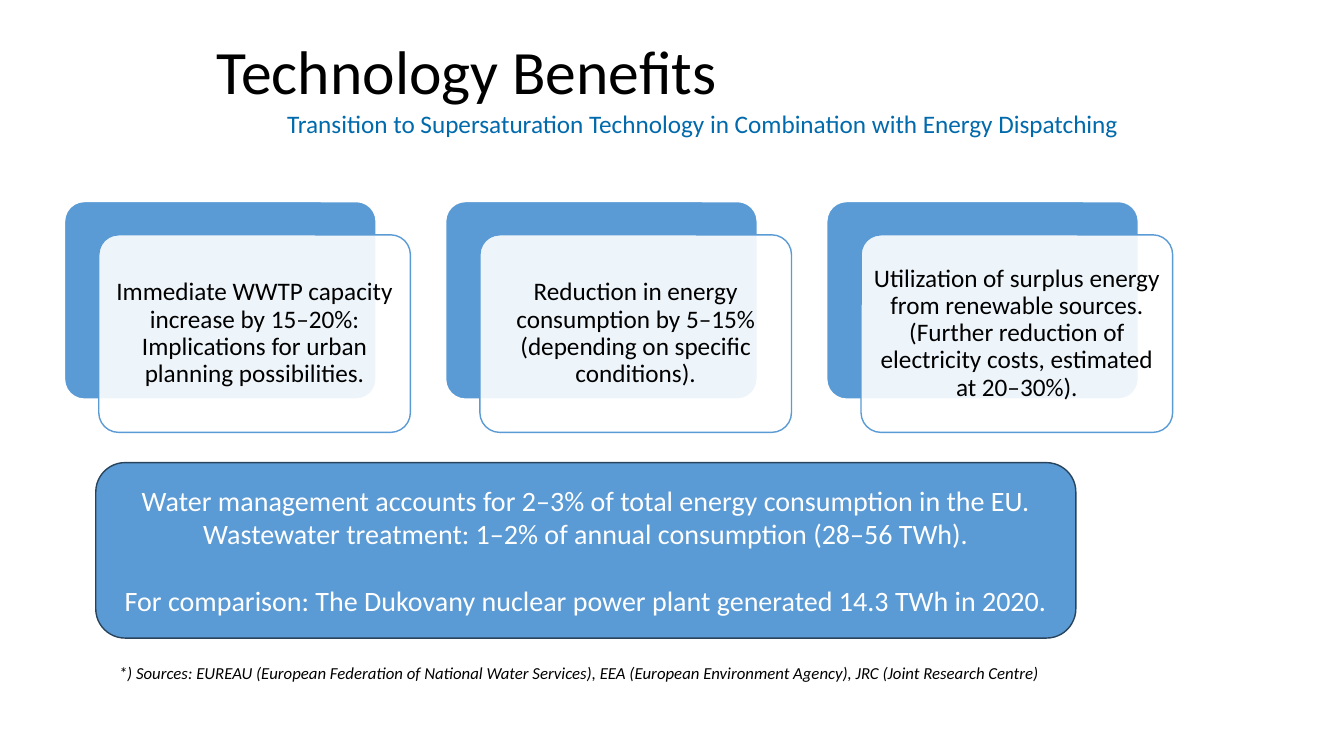
from dataclasses import dataclass
from typing import Any, Optional

import pptx
import pptx.dml.color
import pptx.enum.shapes
import pptx.enum.text
import pptx.oxml.ns
import pptx.util
from lxml import etree

Inches = pptx.util.Inches
Align = pptx.enum.text.PP_ALIGN
Anchor = pptx.enum.text.MSO_ANCHOR


@dataclass(frozen=True)
class Theme:
    font: str = "Calibri"
    black: str = "000000"
    white: str = "FFFFFF"
    blue: str = "5B9BD5"
    subtitle_blue: str = "006AAC"
    dark_outline: str = "28445D"
    title_size: int = 44
    body_size: int = 18
    callout_size: int = 20
    source_size: int = 12


@dataclass(frozen=True)
class Box:
    left: float
    top: float
    width: float
    height: float

    def moved(self, right: float, down: float) -> "Box":
        return Box(self.left + right, self.top + down, self.width, self.height)

    def lengths(self) -> tuple:
        return tuple(Inches(n) for n in (self.left, self.top, self.width, self.height))


THEME = Theme()
BENEFITS = (
    "Immediate WWTP capacity increase by 15–20%: Implications for urban planning possibilities.",
    "Reduction in energy consumption by 5–15% (depending on specific conditions).",
    "Utilization of surplus energy from renewable sources. "
    "(Further reduction of electricity costs, estimated at 20–30%).",
)
FIRST_CARD = Box(0.64, 2, 3.09, 1.96)
CARD_STEP = 3.78
FRONT_OFFSET = (0.34, 0.33)
CARD_INSET = 0.07


def rgb(color: str) -> pptx.dml.color.RGBColor:
    return pptx.dml.color.RGBColor.from_string(color)


def write_text(shape: Any, text: str, size: int, color: str, align: Align = Align.LEFT,
               anchor: Anchor = Anchor.TOP, spacing: Optional[float] = None,
               italic: bool = False) -> None:
    frame = shape.text_frame
    frame.text = text
    frame.word_wrap = True
    frame.vertical_anchor = anchor
    for paragraph in frame.paragraphs:
        paragraph.alignment = align
        if spacing:
            paragraph.line_spacing = spacing
        for run in paragraph.runs:
            run.font.name = THEME.font
            run.font.size = pptx.util.Pt(size)
            run.font.italic = italic
            run.font.color.rgb = rgb(color)


def add_text_box(slide: Any, box: Box, text: str, size: int, color: str,
                 italic: bool = False) -> None:
    shape = slide.shapes.add_textbox(*box.lengths())
    write_text(shape, text, size, color, italic=italic)


def add_rounded_box(slide: Any, box: Box, fill: str, outline: str,
                    corner: Optional[float] = None, opacity: int = 100) -> Any:
    shape = slide.shapes.add_shape(
        pptx.enum.shapes.MSO_SHAPE.ROUNDED_RECTANGLE, *box.lengths())
    shape.shadow.inherit = False
    if corner is not None:
        shape.adjustments[0] = corner
    shape.fill.solid()
    shape.fill.fore_color.rgb = rgb(fill)
    shape.line.color.rgb = rgb(outline)
    shape.line.width = pptx.util.Pt(1)
    if opacity < 100:
        qualified = pptx.oxml.ns.qn
        color = shape.fill._xPr.find(qualified("a:solidFill")).find(qualified("a:srgbClr"))
        etree.SubElement(color, qualified("a:alpha")).set("val", str(opacity * 1000))
    return shape


def add_benefit_card(slide: Any, box: Box, text: str) -> None:
    add_rounded_box(slide, box, THEME.blue, THEME.white, 0.1)
    front = add_rounded_box(slide, box.moved(*FRONT_OFFSET), THEME.white, THEME.blue, 0.1, 90)
    write_text(front, text, THEME.body_size, THEME.black, Align.CENTER, Anchor.MIDDLE, 0.9)
    frame = front.text_frame
    frame.margin_left = frame.margin_right = Inches(CARD_INSET)
    frame.margin_top = frame.margin_bottom = Inches(CARD_INSET)


def main() -> None:
    presentation = pptx.Presentation()
    presentation.slide_width = Inches(13.33)
    presentation.slide_height = Inches(7.5)
    slide = presentation.slides.add_slide(presentation.slide_layouts.get_by_name("Title Only"))

    # Title and subtitle
    title = slide.shapes.title
    title.left, title.top, title.width, title.height = Box(2.05, 0.24, 11.15, 0.99).lengths()
    write_text(title, "Technology Benefits", THEME.title_size, THEME.black,
               anchor=Anchor.MIDDLE, spacing=0.9)
    add_text_box(slide, Box(2.75, 1.03, 8.95, 0.4),
                 "Transition to Supersaturation Technology in Combination with Energy Dispatching",
                 THEME.body_size, THEME.subtitle_blue)

    # Benefit cards
    for index, benefit in enumerate(BENEFITS):
        add_benefit_card(slide, FIRST_CARD.moved(index * CARD_STEP, 0), benefit)

    # Energy consumption callout
    callout = add_rounded_box(slide, Box(0.95, 4.59, 9.72, 1.74), THEME.blue, THEME.dark_outline)
    write_text(callout,
               "Water management accounts for 2–3% of total energy consumption in the EU. "
               "Wastewater treatment: 1–2% of annual consumption (28–56 TWh).\n"
               "For comparison: The Dukovany nuclear power plant generated 14.3 TWh in 2020.",
               THEME.callout_size, THEME.white, Align.CENTER, Anchor.MIDDLE)
    callout.text_frame.paragraphs[1].space_before = pptx.util.Pt(24)

    # Sources
    add_text_box(slide, Box(1.08, 6.53, 10.11, 0.3),
                 "*) Sources: EUREAU (European Federation of National Water Services), "
                 "EEA (European Environment Agency), JRC (Joint Research Centre)",
                 THEME.source_size, THEME.black, italic=True)

    presentation.save("out.pptx")


if __name__ == "__main__":
    main()
